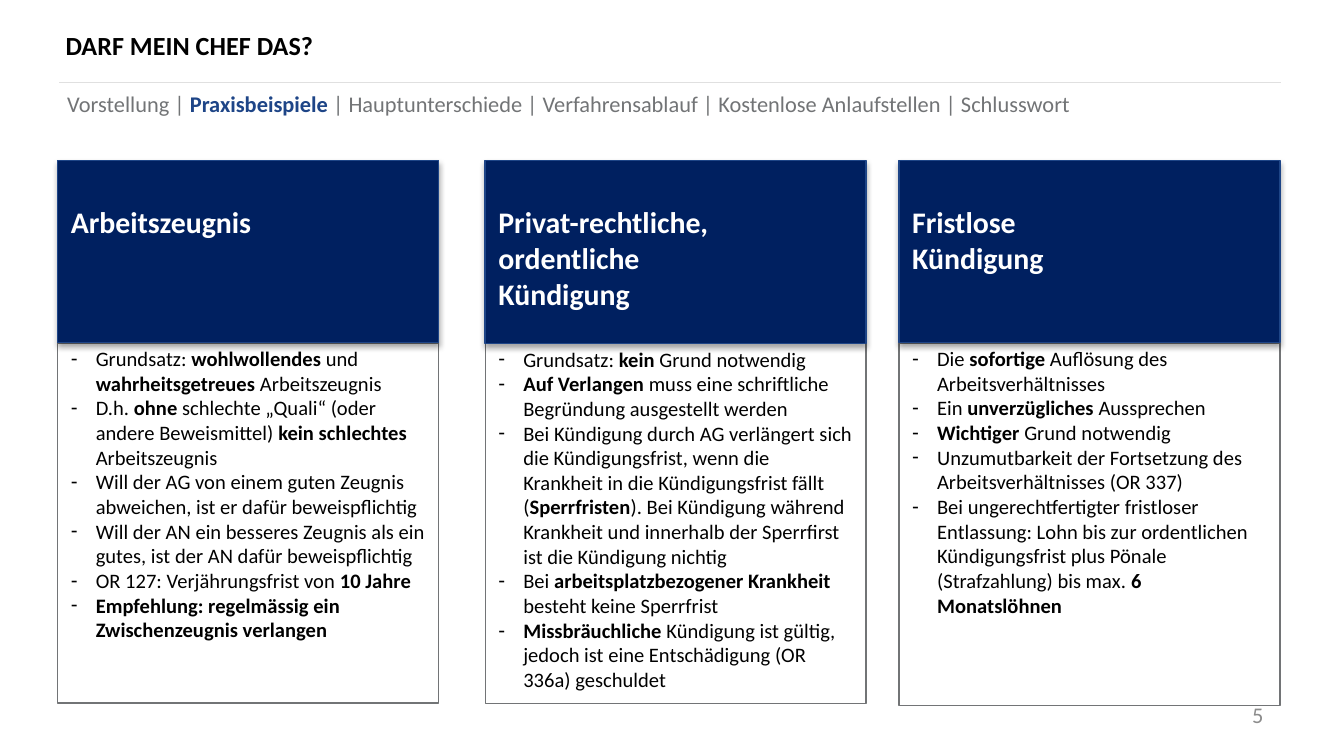
import dataclasses

import lxml.etree
import pptx
import pptx.dml.color
import pptx.enum.shapes
import pptx.enum.text
import pptx.oxml
import pptx.oxml.ns
import pptx.util

Cm = pptx.util.Cm
Pt = pptx.util.Pt
Align = pptx.enum.text.PP_ALIGN
Anchor = pptx.enum.text.MSO_ANCHOR
Kind = pptx.enum.shapes.MSO_SHAPE


@dataclasses.dataclass(frozen=True)
class Theme:
    font: str = "Calibri"
    black: str = "000000"
    white: str = "FFFFFF"
    navy: str = "002060"
    blue: str = "1E4587"
    grey: str = "727476"
    pale: str = "8C8C8C"
    rule: str = "E0E0E0"
    title: int = 14
    head: int = 16
    small: int = 12
    list: int = 11
    edge: float = 0.75


look = Theme()

# Left, top, width, height in cm; asterisks enclose bold words
CARDS = [
    ((1.09, 3.03, 7.2, 10.26), ["Arbeitszeugnis"], [
        "Grundsatz: *wohlwollendes* und *wahrheitsgetreues* Arbeitszeugnis",
        "D.h. *ohne* schlechte „Quali“ (oder andere Beweismittel) "
        "*kein schlechtes* Arbeitszeugnis",
        "Will der AG von einem guten Zeugnis abweichen, ist er dafür beweispflichtig",
        "Will der AN ein besseres Zeugnis als ein gutes, ist der AN dafür beweispflichtig",
        "OR 127: Verjährungsfrist von *10 Jahre*",
        "*Empfehlung: regelmässig ein Zwischenzeugnis verlangen*",
    ]),
    ((9.17, 3.04, 7.2, 10.26), ["Privat-rechtliche,", "ordentliche", "Kündigung"], [
        "Grundsatz: *kein* Grund notwendig",
        "*Auf Verlangen* muss eine schriftliche Begründung ausgestellt werden",
        "Bei Kündigung durch AG verlängert sich die Kündigungsfrist, wenn die "
        "Krankheit in die Kündigungsfrist fällt (*Sperrfristen*). Bei Kündigung "
        "während Krankheit und innerhalb der Sperrfirst ist die Kündigung nichtig",
        "Bei *arbeitsplatzbezogener Krankheit* besteht keine Sperrfrist",
        "*Missbräuchliche* Kündigung ist gültig, jedoch ist eine Entschädigung "
        "(OR 336a) geschuldet",
    ]),
    ((16.99, 3.03, 7.2, 10.31), ["Fristlose", "Kündigung"], [
        "Die *sofortige* Auflösung des Arbeitsverhältnisses",
        "Ein *unverzügliches* Aussprechen",
        "*Wichtiger* Grund notwendig",
        "Unzumutbarkeit der Fortsetzung des Arbeitsverhältnisses (OR 337)",
        "Bei ungerechtfertigter fristloser Entlassung: Lohn bis zur ordentlichen "
        "Kündigungsfrist plus Pönale (Strafzahlung) bis max. *6 Monatslöhnen*",
    ]),
]


def rgb(code):
    return pptx.dml.color.RGBColor.from_string(code)


def place(shape, box):
    shape.left, shape.top, shape.width, shape.height = map(Cm, box)


def outline(shape, color):
    shape.line.color.rgb = rgb(color)
    shape.line.width = Pt(look.edge)


def write(shape, lines, size, color=look.black, strong=None, bold=False,
          align=Align.LEFT, anchor=Anchor.TOP, inset=(0.25, 0.13), bullet=None):
    """Fill a shape with lines; strong is the colour of the marked words."""
    frame = shape.text_frame
    frame.word_wrap = True
    frame.auto_size = pptx.enum.text.MSO_AUTO_SIZE.NONE
    frame.vertical_anchor = anchor
    frame.margin_left = frame.margin_right = Cm(inset[0])
    frame.margin_top, frame.margin_bottom = Cm(inset[1]), Cm(min(inset[1], 0.13))
    for i, line in enumerate(lines):
        para = frame.paragraphs[0] if i == 0 else frame.add_paragraph()
        props = para._p.get_or_add_pPr()
        hang = Cm(0.47) if bullet else 0
        props.set("marL", str(hang))
        props.set("indent", str(-hang))
        tag = "a:buChar" if bullet else "a:buNone"
        mark = lxml.etree.SubElement(props, pptx.oxml.ns.qn(tag))
        if bullet:
            mark.set("char", bullet)
        para.alignment = align
        para.line_spacing = 1.0
        para.space_before = para.space_after = Pt(0)
        for k, part in enumerate(line.split("*")):
            if not part:
                continue
            marked = k % 2 == 1
            run = para.add_run()
            run.text = part
            run.font.name = look.font
            run.font.size = Pt(size)
            run.font.bold = bold or marked
            run.font.color.rgb = rgb(strong if marked and strong else color)


def shade(shape):
    """Cast a soft shadow straight down."""
    shape._element.spPr.append(pptx.oxml.parse_xml(
        f'<a:effectLst {pptx.oxml.ns.nsdecls("a")}>'
        '<a:outerShdw blurRad="39370" dist="22860" dir="5400000" rotWithShape="0">'
        '<a:srgbClr val="000000"><a:alpha val="35000"/></a:srgbClr>'
        '</a:outerShdw></a:effectLst>'))


def header(slide, title, nav, box):
    """Title, rule and chapter trail."""
    x, y, w, h = box
    place(title, (x + 0.12, y, 16.94, 0.99))
    write(title, ["DARF MEIN CHEF DAS?"], look.title, bold=True,
          anchor=Anchor.MIDDLE, inset=(0, 0))

    rule = slide.shapes.add_connector(
        pptx.enum.shapes.MSO_CONNECTOR.STRAIGHT,
        Cm(x), Cm(y + 1.2), Cm(x + w), Cm(y + 1.2))
    outline(rule, look.rule)
    lxml.etree.SubElement(rule._element.spPr, pptx.oxml.ns.qn("a:effectLst"))

    place(nav, (x - 0.1, y + h - 0.84, w - 0.2, 0.84))
    write(nav, ["Vorstellung | *Praxisbeispiele* | Hauptunterschiede | "
                "Verfahrensablauf | Kostenlose Anlaufstellen | Schlusswort"],
          look.small, look.grey, strong=look.blue)


def card(slide, body, box, heads, items):
    """Dark heading block with an outlined list below it."""
    x, y, w, h = box
    top = 3.45
    place(body, (x, y + top, w, h - top))
    outline(body, look.grey)
    write(body, items, look.list, inset=(0.25, 0.06), bullet="-")

    block = slide.shapes.add_shape(Kind.RECTANGLE, Cm(x), Cm(y), Cm(w), Cm(top))
    block.fill.solid()
    block.fill.fore_color.rgb = rgb(look.navy)
    outline(block, look.blue)
    shade(block)
    write(block, heads, look.head, look.white, bold=True, inset=(0.25, 0.82))


def footer(slide, box):
    """Page number."""
    page = slide.shapes.add_textbox(*map(Cm, box))
    write(page, ["5"], look.small, look.pale, align=Align.RIGHT,
          anchor=Anchor.MIDDLE, inset=(0.25, 0))


def main():
    deck = pptx.Presentation()
    deck.slide_width, deck.slide_height = Cm(25.4), Cm(14.29)
    # The comparison layout has a title and four bodies
    slide = deck.slides.add_slide(deck.slide_layouts[4])
    title, nav, *bodies = list(slide.placeholders)
    header(slide, title, nav, (1.12, 0.36, 23.09, 2.05))
    for body, (box, heads, items) in zip(bodies, CARDS):
        card(slide, body, box, heads, items)
    # Starts just below the right-hand card
    footer(slide, (18.21, 13.23, 5.92, 0.56))
    deck.save("out.pptx")


if __name__ == "__main__":
    main()
